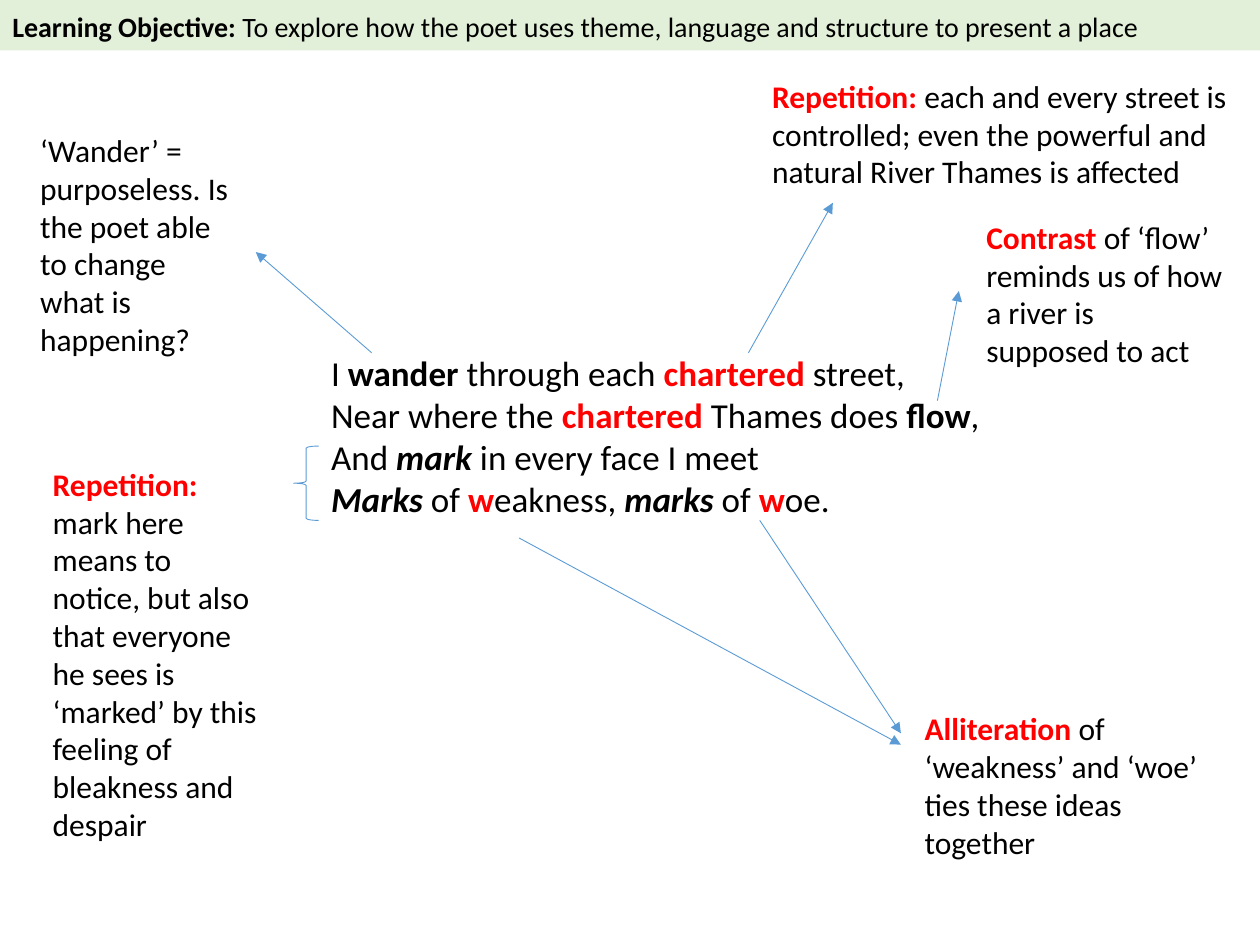
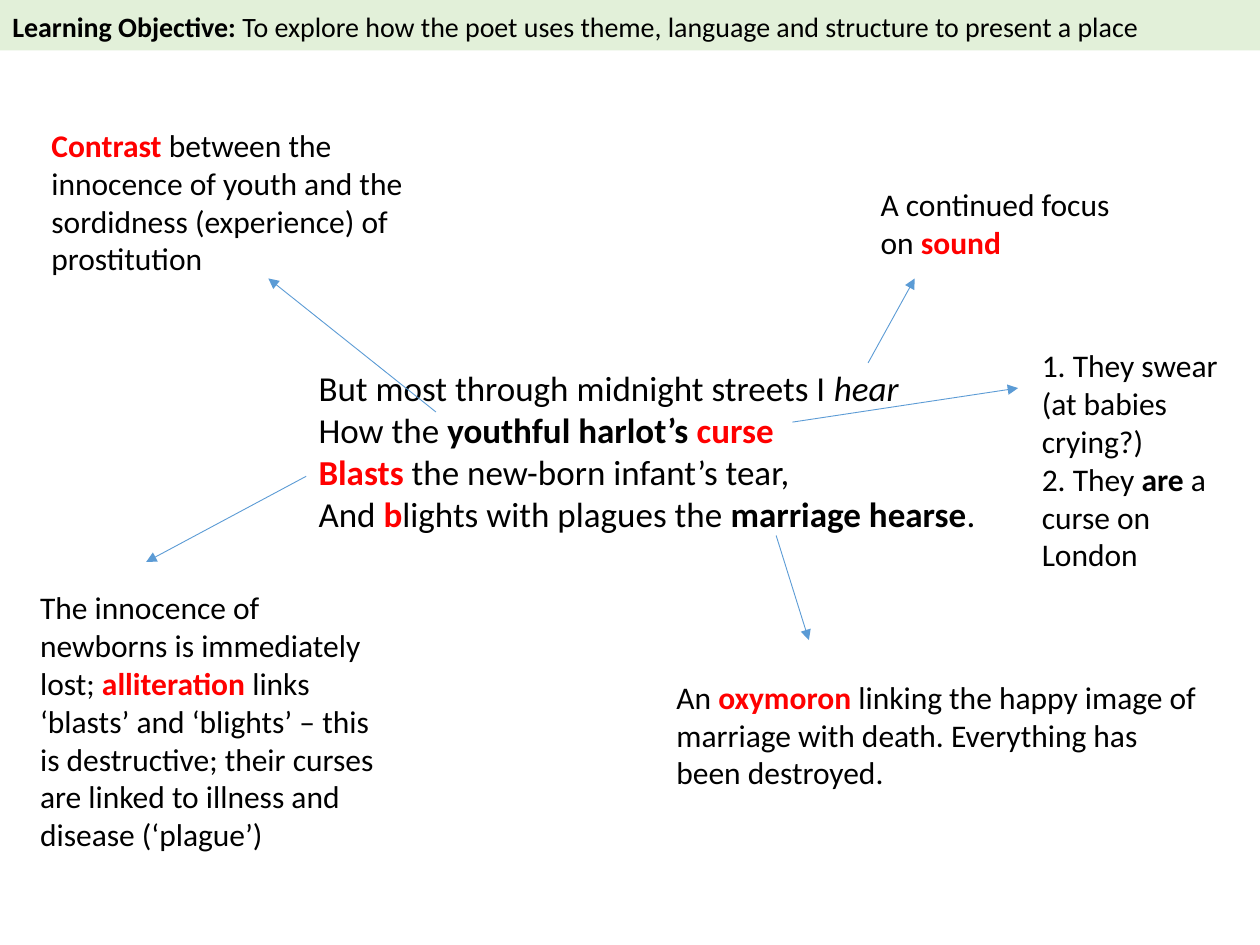
from dataclasses import dataclass
from typing import NamedTuple

from lxml.etree import SubElement
from pptx import Presentation
from pptx.dml.color import RGBColor
from pptx.enum.shapes import MSO_CONNECTOR, MSO_SHAPE
from pptx.enum.text import MSO_ANCHOR, PP_ALIGN
from pptx.oxml.ns import qn
from pptx.util import Emu, Pt

EMU_PER_PX = 9144
FONT = "Calibri"
COLOURS = {"paper": "FFFFFF", "band": "E2F0D9", "ink": "000000", "term": "FF0000", "line": "5B9BD5"}
STYLES = {
    "plain": {"bold": False, "italic": False},
    "bold": {"bold": True, "italic": False},
    "italic": {"bold": False, "italic": True},
    "echo": {"bold": True, "italic": True},
    "term": {"bold": True, "italic": False},
}
BAND_FRAME = {"margin_left": 10, "margin_right": 10, "margin_top": 8, "margin_bottom": 5}
NOTE_FRAME = {"margin_left": 10, "margin_right": 10, "margin_top": 5, "margin_bottom": 5}
LINE_WIDTH = Pt(0.5)


class Run(NamedTuple):
    text: str
    style: str = "plain"


class Box(NamedTuple):
    left: int
    top: int
    width: int
    height: int


class Arrow(NamedTuple):
    start_x: int
    start_y: int
    end_x: int
    end_y: int


@dataclass
class Note:
    box: Box
    paragraphs: list[list[Run]]
    size: int = 18


@dataclass
class Page:
    verse: Note
    notes: list[Note]
    arrows: list[Arrow]
    braces: tuple[Box, ...] = ()


OBJECTIVE = [[
    Run("Learning Objective: ", "bold"),
    Run("To explore how the poet uses theme, language and structure to present a place"),
]]

CHARTERED_STREETS = Page(
    verse=Note(Box(253, 274, 547, 145), [
        [Run("I "), Run("wander", "bold"), Run(" through each "), Run("chartered ", "term"), Run("street,")],
        [Run("Near where the "), Run("chartered ", "term"), Run("Thames does "), Run("flow", "bold"), Run(",")],
        [Run("And "), Run("mark", "echo"), Run(" in every face I meet")],
        [Run("Marks", "echo"), Run(" of "), Run("w", "term"), Run("eakness, "),
         Run("marks", "echo"), Run(" of "), Run("w", "term"), Run("oe.")],
    ], 20),
    notes=[
        Note(Box(22, 99, 171, 192), [
            [Run("‘Wander’ = purposeless. Is the poet able to change what is happening?")]]),
        Note(Box(603, 56, 393, 101), [
            [Run("Repetition: ", "term"),
             Run("each and every street is controlled; even the powerful and natural River Thames is affected")]]),
        Note(Box(32, 364, 184, 313), [
            [Run("Repetition: ", "term"),
             Run("mark here means to notice, but also that everyone he sees is ‘marked’ "
                 "by this feeling of bleakness and despair")]]),
        Note(Box(724, 558, 262, 131), [
            [Run("Alliteration ", "term"), Run("of ‘weakness’ and ‘woe’ ties these ideas together")]]),
        Note(Box(773, 168, 207, 131), [
            [Run("Contrast ", "term"), Run("of ‘flow’ reminds us of how a river is supposed to act")]]),
    ],
    arrows=[
        Arrow(295, 280, 203, 200),
        Arrow(594, 280, 661, 161),
        Arrow(412, 427, 715, 591),
        Arrow(603, 413, 715, 582),
        Arrow(744, 318, 761, 231),
    ],
    braces=(Box(233, 354, 20, 59),),
)

MIDNIGHT_STREETS = Page(
    verse=Note(Box(243, 286, 566, 145), [
        [Run("But most through midnight streets I "), Run("hear", "italic")],
        [Run("How the "), Run("youthful harlot’s ", "bold"), Run("curse", "term")],
        [Run("Blasts", "term"), Run(" the new-born infant’s tear,")],
        [Run("And "), Run("b", "term"), Run("lights with plagues the "), Run("marriage hearse", "bold"), Run(".")],
    ], 20),
    notes=[
        Note(Box(31, 95, 323, 131), [
            [Run("Contrast", "term"),
             Run(" between the innocence of youth and the sordidness (experience) of prostitution")]]),
        Note(Box(689, 142, 221, 71), [[Run("A continued focus on "), Run("sound", "term")]]),
        Note(Box(817, 270, 167, 192), [
            [Run("1. They swear (at babies crying?)")],
            [Run("2. They "), Run("are", "bold"), Run(" a curse on London")]]),
        Note(Box(22, 462, 300, 222), [
            [Run("The innocence of newborns is immediately lost; "), Run("alliteration", "term"),
             Run(" links ‘blasts’ and ‘blights’ – this is destructive; their curses "
                 "are linked to illness and disease (‘plague’)")]]),
        Note(Box(527, 533, 442, 101), [
            [Run("An "), Run("oxymoron", "term"),
             Run(" linking the happy image of marriage with death. Everything has been destroyed.")]]),
    ],
    arrows=[
        Arrow(346, 327, 213, 221),
        Arrow(689, 288, 726, 221),
        Arrow(629, 335, 808, 308),
        Arrow(243, 378, 116, 446),
        Arrow(616, 425, 642, 508),
    ],
)


def px(length: int) -> Emu:
    """Turn a length in px into EMU."""
    return Emu(length * EMU_PER_PX)


def colour(name: str) -> RGBColor:
    """Look up a named colour."""
    return RGBColor.from_string(COLOURS[name])


def write_text(shape, paragraphs: list[list[Run]], size: int, margins: dict[str, int]) -> None:
    """Fill a shape with styled paragraphs."""
    frame = shape.text_frame
    frame.word_wrap = True
    frame.vertical_anchor = MSO_ANCHOR.TOP
    for name, length in margins.items():
        setattr(frame, name, px(length))
    for index, runs in enumerate(paragraphs):
        paragraph = frame.add_paragraph() if index else frame.paragraphs[0]
        paragraph.alignment = PP_ALIGN.LEFT
        for text, style in runs:
            run = paragraph.add_run()
            run.text = text
            for name, value in {"name": FONT, "size": Pt(size), **STYLES[style]}.items():
                setattr(run.font, name, value)
            run.font.color.rgb = colour("term" if style == "term" else "ink")


def draw_band(slide) -> None:
    """Draw the learning objective across the top."""
    shape = slide.shapes.add_shape(MSO_SHAPE.RECTANGLE, *map(px, Box(0, 0, 1000, 40)))
    shape.shadow.inherit = False
    shape.fill.solid()
    shape.fill.fore_color.rgb = colour("band")
    shape.line.fill.background()
    write_text(shape, OBJECTIVE, 16, BAND_FRAME)


def draw_note(slide, note: Note) -> None:
    """Draw a verse or an annotation."""
    shape = slide.shapes.add_textbox(*map(px, note.box))
    write_text(shape, note.paragraphs, note.size, NOTE_FRAME)


def style_line(line) -> None:
    """Apply the thin blue line."""
    line.color.rgb = colour("line")
    line.width = LINE_WIDTH


def draw_arrow(slide, arrow: Arrow) -> None:
    """Draw an arrow from the verse to an annotation."""
    connector = slide.shapes.add_connector(MSO_CONNECTOR.STRAIGHT, *map(px, arrow))
    style_line(connector.line)
    properties = connector._element.spPr
    SubElement(properties.find(qn("a:ln")), qn("a:tailEnd"), type="triangle")
    SubElement(properties, qn("a:effectLst"))


def draw_brace(slide, box: Box) -> None:
    """Draw a brace that groups lines of the verse."""
    shape = slide.shapes.add_shape(MSO_SHAPE.LEFT_BRACE, *map(px, box))
    shape.shadow.inherit = False
    shape.fill.background()
    style_line(shape.line)


def draw_page(presentation, page: Page) -> None:
    """Add one annotated stanza as a slide."""
    slide = presentation.slides.add_slide(presentation.slide_layouts[6])
    slide.background.fill.solid()
    slide.background.fill.fore_color.rgb = colour("paper")
    draw_band(slide)
    for note in [page.verse, *page.notes]:
        draw_note(slide, note)
    for arrow in page.arrows:
        draw_arrow(slide, arrow)
    for brace in page.braces:
        draw_brace(slide, brace)


def main() -> None:
    """Build and save the presentation."""
    presentation = Presentation()
    presentation.slide_width = px(1000)
    presentation.slide_height = px(750)
    for page in (CHARTERED_STREETS, MIDNIGHT_STREETS):
        draw_page(presentation, page)
    presentation.save("out.pptx")


if __name__ == "__main__":
    main()
